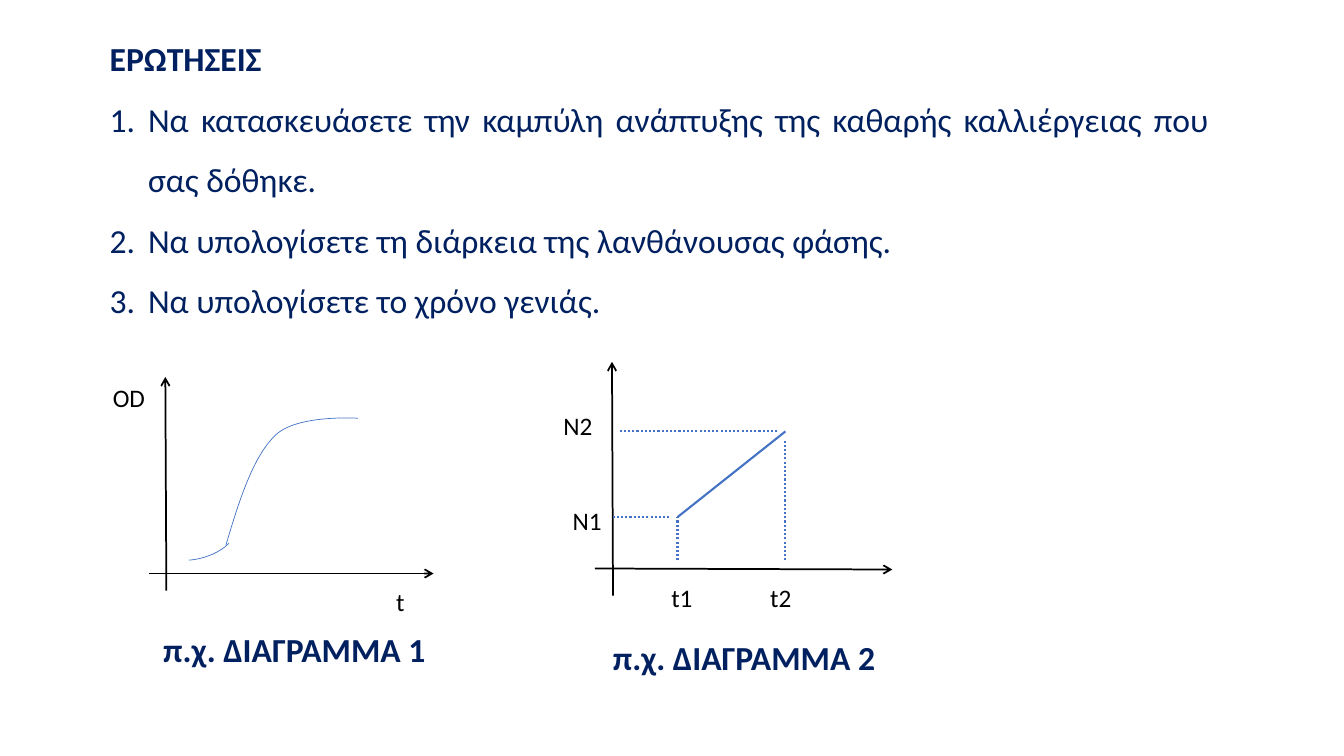
import pptx
import pptx.util
import pptx.dml.color
import pptx.enum.dml
import pptx.enum.shapes
import pptx.enum.text
import pptx.oxml.ns
import lxml.etree

Inches = pptx.util.Inches
Pt = pptx.util.Pt
qn = pptx.oxml.ns.qn
COLOURS = {"navy": "002060", "black": "000000", "blue": "4472C4"}


class SlideWriter:
    font_name = "Calibri"

    def __init__(self, slide):
        self.slide = slide

    def rgb(self, colour):
        return pptx.dml.color.RGBColor.from_string(COLOURS[colour])

    def style_text(self, paragraph, size, colour, bold=False):
        font = paragraph.font
        font.name = self.font_name
        font.size = Pt(size)
        font.bold = bold
        font.color.rgb = self.rgb(colour)

    def text(self, content, left, top, width, height, size=18, colour="black", bold=False):
        box = self.slide.shapes.add_textbox(
            Inches(left), Inches(top), Inches(width), Inches(height))
        frame = box.text_frame
        frame.word_wrap = True
        paragraph = frame.paragraphs[0]
        paragraph.text = content
        self.style_text(paragraph, size, colour, bold)
        return frame

    def numbered(self, frame, content, size, colour):
        paragraph = frame.add_paragraph()
        paragraph.text = content
        paragraph.alignment = pptx.enum.text.PP_ALIGN.JUSTIFY
        paragraph.line_spacing = 1.5
        properties = paragraph._p.get_or_add_pPr()
        properties.set("marL", str(Inches(0.38)))
        properties.set("indent", str(-Inches(0.38)))
        lxml.etree.SubElement(properties, qn("a:buFont"), typeface="+mj-lt")
        lxml.etree.SubElement(properties, qn("a:buAutoNum"), type="arabicPeriod")
        self.style_text(paragraph, size, colour)

    def line(self, start, end, colour="blue", width=1.5, dotted=False, arrow=False):
        connector = self.slide.shapes.add_connector(
            pptx.enum.shapes.MSO_CONNECTOR.STRAIGHT,
            *(Inches(value) for value in (*start, *end)))
        connector.line.color.rgb = self.rgb(colour)
        connector.line.width = Pt(width)
        if dotted:
            connector.line.dash_style = pptx.enum.dml.MSO_LINE.ROUND_DOT
        if arrow:
            lxml.etree.SubElement(connector.line._get_or_add_ln(), qn("a:tailEnd"), type="arrow")
        lxml.etree.SubElement(connector._element.spPr, qn("a:effectLst"))

    def axis(self, start, end):
        self.line(start, end, "black", 1.25, arrow=True)

    def outline(self, shape):
        shape.shadow.inherit = False
        shape.fill.background()
        shape.line.color.rgb = self.rgb("blue")
        shape.line.width = Pt(0.5)

    def arc(self, left, top, width, height, angles, rotation):
        shape = self.slide.shapes.add_shape(
            pptx.enum.shapes.MSO_SHAPE.ARC,
            Inches(left), Inches(top), Inches(width), Inches(height))
        for index, angle in enumerate(angles):
            shape.adjustments[index] = angle * 60000 / 100000
        shape.rotation = rotation
        shape._element.spPr.find(qn("a:xfrm")).set("flipH", "1")
        self.outline(shape)

    def curve(self, start, controls):
        builder = self.slide.shapes.build_freeform(
            Inches(start[0]), Inches(start[1]), scale=1.0)
        builder.add_line_segments(
            [(Inches(x), Inches(y)) for x, y in controls], close=False)
        shape = builder.convert_to_shape()
        segments = list(shape._element.iter(qn("a:lnTo")))
        for first in range(0, len(segments), 3):
            outline_path = segments[first].getparent()
            bezier = lxml.etree.SubElement(outline_path, qn("a:cubicBezTo"))
            for segment in segments[first:first + 3]:
                bezier.append(segment[0])
                outline_path.remove(segment)
        self.outline(shape)


def main():
    presentation = pptx.Presentation()
    presentation.slide_width = Inches(13.33)
    presentation.slide_height = Inches(7.5)
    writer = SlideWriter(presentation.slides.add_slide(presentation.slide_layouts[6]))

    questions = writer.text("ΕΡΩΤΗΣΕΙΣ", 0.99, 0.33, 11.1, 3.33, 24, "navy", True)
    for question in (
        "Να κατασκευάσετε την καμπύλη ανάπτυξης της καθαρής καλλιέργειας που σας δόθηκε.",
        "Να υπολογίσετε τη διάρκεια της λανθάνουσας φάσης.",
        "Να υπολογίσετε το χρόνο γενιάς.",
    ):
        writer.numbered(questions, question, 24, "navy")

    for caption, left, top, width in (
        ("π.χ. ΔΙΑΓΡΑΜΜΑ 1", 1.52, 6.19, 2.91),
        ("π.χ. ΔΙΑΓΡΑΜΜΑ 2", 5.98, 6.27, 3.13),
    ):
        writer.text(caption, left, top, width, 0.5, 24, "navy", True)

    for start, end in (
        ((1.48, 5.69), (4.3, 5.69)),
        ((1.65, 5.86), (1.64, 3.74)),
        ((5.9, 5.64), (8.85, 5.65)),
        ((6.08, 5.91), (6.07, 3.59)),
    ):
        writer.axis(start, end)

    for label, left, top, width, height in (
        ("OD", 1.02, 3.74, 0.55, 0.4),
        ("t", 3.83, 5.77, 0.31, 0.4),
        ("t1", 6.56, 5.73, 0.49, 0.44),
        ("t2", 7.54, 5.73, 0.57, 0.44),
        ("N1", 5.58, 4.96, 0.55, 0.44),
        ("N2", 5.49, 4.02, 0.55, 0.44),
    ):
        writer.text(label, left, top, width, height)

    writer.arc(1.56, 5.11, 0.79, 0.43, (234.66, 332.77), 164.2)
    writer.curve((2.24, 5.41), [
        (2.37, 4.97), (2.51, 4.53), (2.73, 4.32),
        (2.94, 4.11), (3.55, 4.15), (3.55, 4.15)])

    t1, t2, n1, n2 = 6.72, 7.79, 5.13, 4.28
    gap, guide_bottom = 0.08, 5.56
    writer.line((t1, n1), (t2, n2))
    for start, end in (
        ((t1, guide_bottom), (t1, n1)),
        ((t2, guide_bottom), (t2, n2 + gap)),
        ((t2 - gap, n2), (6.15, n2)),
        ((t1 - gap, n1), (6.07, n1)),
    ):
        writer.line(start, end, dotted=True)

    presentation.save("out.pptx")


if __name__ == "__main__":
    main()
